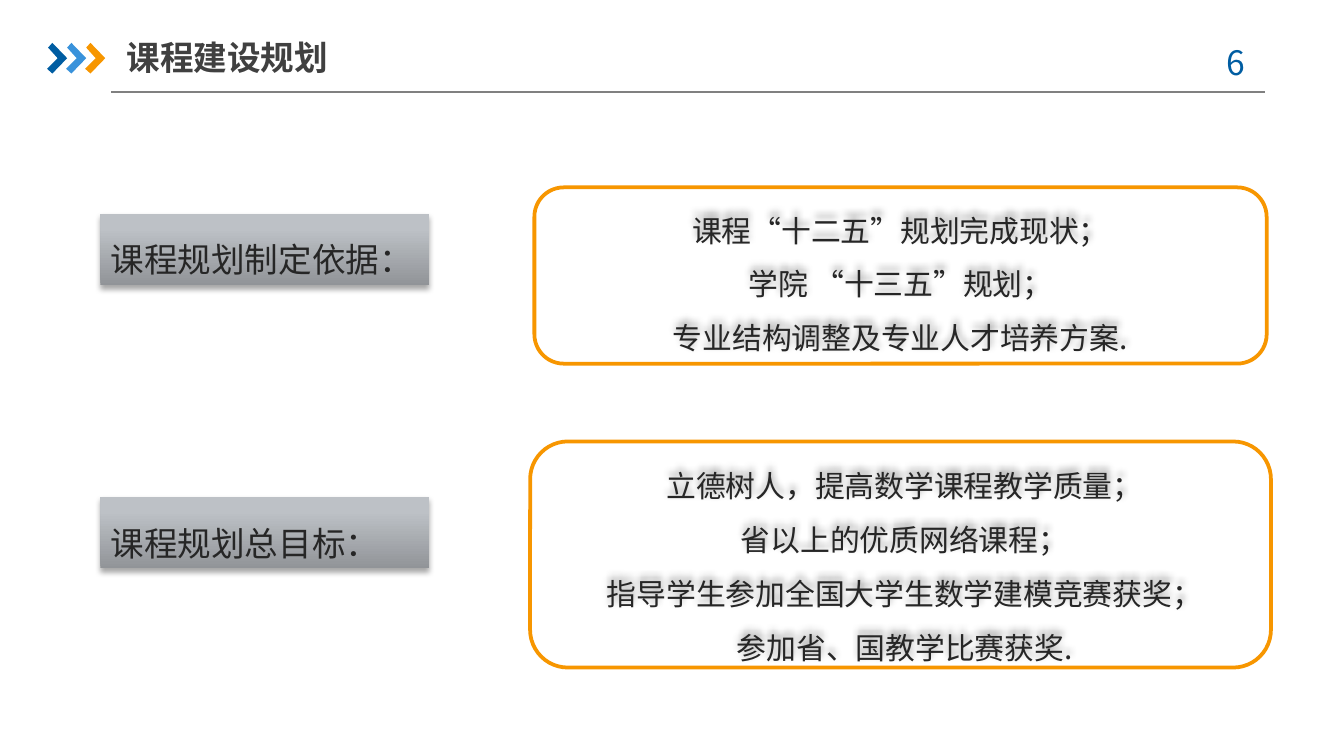
from copy import deepcopy
from lxml import etree
from pptx import Presentation
from pptx.dml.color import RGBColor
from pptx.enum.shapes import MSO_CONNECTOR as Connector, MSO_SHAPE as Shape
from pptx.enum.text import MSO_ANCHOR as Anchor, PP_ALIGN as Align
from pptx.oxml.ns import qn
from pptx.util import Cm, Pt

FONT = "Noto Sans CJK SC"
rgb = RGBColor.from_string


def write(shape, lines, size, color, align, spacing=1.0, bold=False):
    frame = shape.text_frame
    frame.word_wrap = True
    frame.text = "\n".join(lines)
    for para in frame.paragraphs:
        para.alignment = align
        para.line_spacing = spacing
        para.font.size = Pt(size)
        para.font.name = FONT
        para.font.bold = bold
        para.font.color.rgb = rgb(color)
        for span in para.runs:
            east_asian = etree.SubElement(span._r.get_or_add_rPr(), qn("a:ea"))
            east_asian.set("typeface", FONT)
    return frame


def add_shadow(shape, blur, distance, degrees, alpha):
    shape.shadow.inherit = False
    effects = shape._element.spPr.find(qn("a:effectLst"))
    shadow = etree.SubElement(effects, qn("a:outerShdw"), blurRad=str(Pt(blur)),
                              dist=str(Pt(distance)), dir=str(degrees * 60000),
                              rotWithShape="0")
    tint = etree.SubElement(shadow, qn("a:srgbClr"), val="000000")
    etree.SubElement(tint, qn("a:alpha"), val=str(alpha * 1000))


deck = Presentation()
deck.slide_width, deck.slide_height = Cm(25.4), Cm(14.28)
page = deck.slides.add_slide(deck.slide_layouts[6])

rule = page.shapes.add_connector(Connector.STRAIGHT, Cm(2.1), Cm(1.74), Cm(23.9), Cm(1.74))
rule.line.color.rgb = rgb("808080")
rule.line.width = Pt(0.75)
etree.SubElement(rule._element.spPr, qn("a:effectLst"))

outline = [(0.02, 0.09), (0.1, 0), (0.38, 0.29), (0.1, 0.58), (0, 0.49), (0.2, 0.29)]
for index, color in enumerate(["005DA2", "3992DB", "F79600"]):
    left, top = 0.89 + 0.36 * index, 0.81
    points = [(Cm(left + x), Cm(top + y)) for x, y in outline]
    builder = page.shapes.build_freeform(*points[0])
    builder.add_line_segments(points[1:], close=True)
    chevron = builder.convert_to_shape()
    chevron.fill.solid()
    chevron.fill.fore_color.rgb = rgb(color)
    chevron.line.fill.background()
    chevron.shadow.inherit = False

number = page.shapes.add_textbox(Cm(22.5), Cm(0.66), Cm(1.85), Cm(1.02))
write(number, ["6 "], 18, "005DA2", Align.CENTER)

title = page.shapes.add_textbox(Cm(2.39), Cm(0.54), Cm(11.13), Cm(1.07))
frame = write(title, ["课程建设规划"], 18, "404040", Align.LEFT, bold=True)
frame.margin_left = frame.margin_right = 0
frame.vertical_anchor = Anchor.MIDDLE

for top, label in [(4.04, "课程规划制定依据："), (9.39, "课程规划总目标：")]:
    bar = page.shapes.add_shape(Shape.RECTANGLE, Cm(1.9), Cm(top), Cm(6.21), Cm(1.35))
    bar.fill.gradient()
    bar.fill.gradient_angle = 90
    stop_list = bar._element.spPr.find(qn("a:gradFill")).find(qn("a:gsLst"))
    stop_list.append(deepcopy(stop_list[-1]))
    shades = [(0, "919498"), (0.8, "BDC1C6"), (1, "BEC2C7")]
    for stop, (position, color) in zip(bar.fill.gradient_stops, shades):
        stop.position = position
        stop.color.rgb = rgb(color)
    bar.line.fill.background()
    add_shadow(bar, 3.1, 1.8, 90, 35)
    frame = write(bar, [label], 18, "262626", Align.JUSTIFY, 1.5)
    frame.vertical_anchor = Anchor.TOP
    frame.margin_left = frame.margin_right = Cm(0.19)
    frame.margin_top = frame.margin_bottom = Cm(0.1)

panels = [
    ((10.1, 3.55, 13.84, 3.33), (10.1, 3.54, 13.84, 3.33),
     ["课程“十二五”规划完成现状；", "学院 “十三五”规划；", "专业结构调整及专业人才培养方案."]),
    ((10.1, 8.38, 14, 4.24), (10.02, 8.34, 14, 4.27),
     ["立德树人，提高数学课程教学质量；", "省以上的优质网络课程；",
      "指导学生参加全国大学生数学建模竞赛获奖；", "参加省、国教学比赛获奖."]),
]
for text_area, border_area, lines in panels:
    box = page.shapes.add_textbox(*map(Cm, text_area))
    write(box, lines, 16, "262626", Align.CENTER, 1.5)
    add_shadow(box, 4, 3, 270, 40)
    border = page.shapes.add_shape(Shape.ROUNDED_RECTANGLE, *map(Cm, border_area))
    border.fill.background()
    border.line.color.rgb = rgb("F79600")
    border.line.width = Pt(2)
    border.shadow.inherit = False

deck.save("out.pptx")
